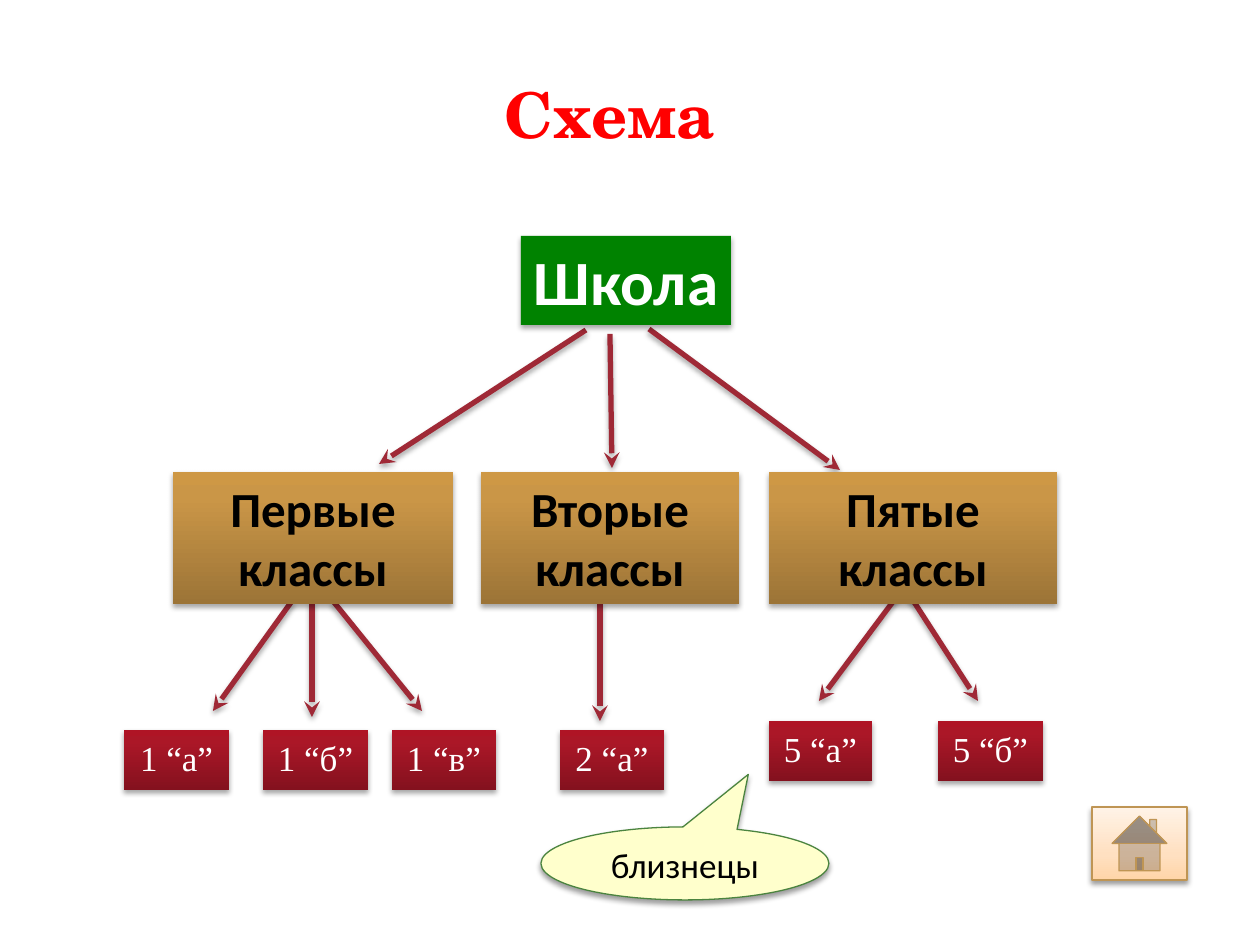
from lxml.etree import SubElement
from pptx import Presentation
from pptx.dml.color import RGBColor
from pptx.enum.shapes import MSO_CONNECTOR, MSO_SHAPE
from pptx.enum.text import MSO_ANCHOR, PP_ALIGN
from pptx.oxml.ns import qn
from pptx.util import Pt

PX = 914400 // 126
GOLD = [(0, "9C7437"), (80, "CA9647"), (100, "CE9845")]
CRIMSON = [(0, "84111E"), (80, "AB1727"), (100, "AF1425")]
PEACH = [(0, "FFD5A8"), (35, "FFE0C1"), (100, "FFF3E7")]

prs = Presentation()
prs.slide_width, prs.slide_height = 1260 * PX, 945 * PX
slide = prs.slides.add_slide(prs.slide_layouts[6])


def style(shape, fill=None, line=None, width=0.75, alpha=35):
    """Solid or upward gradient fill, line and soft shadow below."""
    props = shape._element.spPr
    if isinstance(fill, list):
        gradient = SubElement(props, qn("a:gradFill"), rotWithShape="1")
        stops = SubElement(gradient, qn("a:gsLst"))
        for position, color in fill:
            stop = SubElement(stops, qn("a:gs"), pos=str(position * 1000))
            SubElement(stop, qn("a:srgbClr"), val=color)
        SubElement(gradient, qn("a:lin"), ang="16200000", scaled="0")
    elif fill:
        shape.fill.solid()
        shape.fill.fore_color.rgb = RGBColor.from_string(fill)
    if line:
        shape.line.color.rgb = RGBColor.from_string(line)
        shape.line.width = Pt(width)
    else:
        shape.line.fill.background()
    effects = SubElement(props, qn("a:effectLst"))
    shadow = SubElement(effects, qn("a:outerShdw"), blurRad=str(Pt(3.1)),
                        dist=str(Pt(1.8)), dir="5400000", rotWithShape="0")
    black = SubElement(shadow, qn("a:srgbClr"), val="000000")
    SubElement(black, qn("a:alpha"), val=str(alpha * 1000))


def write(shape, text, size, font, color, bold=False, wrap=True):
    frame = shape.text_frame
    frame.word_wrap = wrap
    frame.vertical_anchor = MSO_ANCHOR.TOP
    paragraph = frame.paragraphs[0]
    paragraph.alignment = PP_ALIGN.CENTER
    run = paragraph.add_run()
    run.text = text
    run.font.size, run.font.name, run.font.bold = Pt(size), font, bold
    run.font.color.rgb = RGBColor.from_string(color)


# Arrows: school to grades, then grades to classes
arrows = [
    (586, 330, 379, 464), (610, 334, 612, 468), (649, 329, 840, 470),
    (292, 601, 213, 711), (312, 601, 312, 717), (333, 601, 422, 711),
    (600, 601, 600, 721), (901, 591, 819, 701), (907, 591, 978, 701),
]
for ends in arrows:
    arrow = slide.shapes.add_connector(
        MSO_CONNECTOR.STRAIGHT, *(end * PX for end in ends))
    style(arrow, line="9F2936", width=3)
    SubElement(arrow.line._get_or_add_ln(), qn("a:tailEnd"), type="stealth")

# School, grades and classes: left, top, width, height, text
levels = [
    ("008200", 36, "Calibri", "FFFFFF", True, [(521, 236, 210, 89, "Школа")]),
    (GOLD, 28, "Calibri", "000000", True, [
        (173, 472, 280, 132, "Первые классы"),
        (481, 472, 258, 132, "Вторые классы"),
        (769, 472, 288, 132, "Пятые классы")]),
    (CRIMSON, 20, "Times New Roman", "FFFFFF", False, [
        (124, 730, 105, 60, "1 “а”"),
        (263, 730, 105, 60, "1 “б”"),
        (392, 730, 104, 60, "1 “в”"),
        (560, 730, 104, 60, "2 “а”"),
        (769, 721, 103, 60, "5 “а”"),
        (938, 721, 105, 60, "5 “б”")]),
]
for fill, size, font, color, bold, nodes in levels:
    for *place, label in nodes:
        node = slide.shapes.add_shape(
            MSO_SHAPE.RECTANGLE, *(length * PX for length in place))
        style(node, fill)
        write(node, label, size, font, color, bold, wrap=bold)

# Title
title = slide.shapes.add_textbox(344 * PX, 69 * PX, 532 * PX, 112 * PX)
write(title, "Схема", 36, "TeX Gyre Schola", "FF0000", bold=True, wrap=False)

# Twins callout
twins = slide.shapes.add_shape(
    MSO_SHAPE.OVAL_CALLOUT, 541 * PX, 827 * PX, 288 * PX, 73 * PX)
twins.adjustments[0], twins.adjustments[1] = 0.22, -1.22
style(twins, "FFFFCC", "4B843F", alpha=38)
write(twins, "близнецы", 20, "Calibri", "000000")

# Home button
home = slide.shapes.add_shape(
    MSO_SHAPE.ACTION_BUTTON_HOME, 1092 * PX, 807 * PX, 95 * PX, 73 * PX)
style(home, PEACH, "BF9554", alpha=38)

prs.save("out.pptx")
